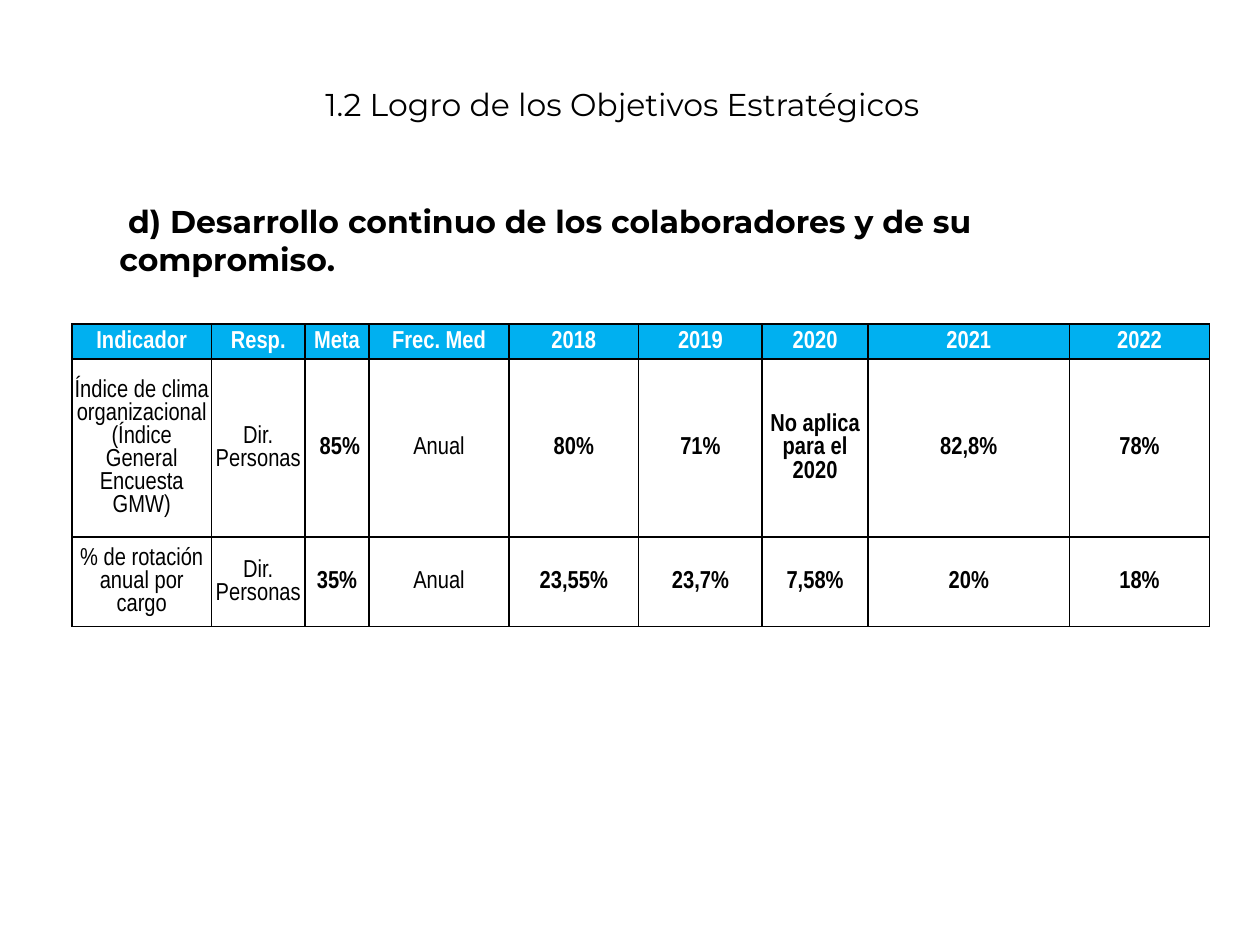
from lxml import etree
from pptx import Presentation
from pptx.dml.color import RGBColor
from pptx.enum import text
from pptx.oxml.ns import qn
from pptx.util import Inches, Pt

BLACK, WHITE, BLUE = "000000", "FFFFFF", "00B0F0"
HEADINGS = [
    # wording, (left, top, width, height), alignment, bold
    ("1.2 Logro de los Objetivos Estratégicos", (0.85, 0.42, 8.11, 0.81),
     text.PP_ALIGN.CENTER, False),
    ("d) Desarrollo continuo de los colaboradores y de su compromiso.",
     (0.85, 1.5, 8.07, 0.81), text.PP_ALIGN.LEFT, True),
]
INDICATORS = [
    ["Indicador", "Resp.", "Meta", "Frec. Med", "2018", "2019", "2020", "2021", "2022"],
    ["Índice de clima organizacional (Índice General Encuesta GMW)", "Dir. Personas",
     " 85%", "Anual", "80%", "71%", "No aplica para el 2020", "82,8%", "78%"],
    ["% de rotación anual por cargo", "Dir. Personas",
     "35%", "Anual", "23,55%", "23,7%", "7,58%", "20%", "18%"],
]
PLAIN_COLUMNS = {"Indicador", "Resp.", "Frec. Med"}
COLUMN_WIDTHS = [1.11, 0.74, 0.51, 1.11, 1.03, 0.98, 0.84, 1.6, 1.11]
ROW_HEIGHTS = [0.28, 1.41, 0.71]
TABLE_LEFT, TABLE_TOP = 0.57, 2.57
CELL_FORMAT = {
    "vertical_anchor": text.MSO_ANCHOR.MIDDLE,
    "margin_left": Inches(0.01), "margin_right": Inches(0.01),
    "margin_top": Inches(0.01), "margin_bottom": 0,
}


def rgb(hex_color):
    return RGBColor.from_string(hex_color)


def set_format(target, values):
    for name, value in values.items():
        setattr(target, name, value)


def add_run(paragraph, words, font, size, color, bold=False):
    run = paragraph.add_run()
    run.text = words
    set_format(run.font, {"name": font, "size": Pt(size), "bold": bold})
    run.font.color.rgb = rgb(color)


def add_borders(cell, color, width):
    """Line all four sides; borders must come before the fill in the cell XML."""
    properties = cell._tc.get_or_add_tcPr()
    for position, side in enumerate(("lnL", "lnR", "lnT", "lnB")):
        line = etree.Element(qn(f"a:{side}"), w=str(Pt(width)))
        fill = etree.SubElement(line, qn("a:solidFill"))
        etree.SubElement(fill, qn("a:srgbClr"), val=color)
        properties.insert(position, line)


def add_heading(slide, words, place, alignment, bold):
    frame = slide.shapes.add_textbox(*map(Inches, place)).text_frame
    set_format(frame, {"word_wrap": True, "vertical_anchor": text.MSO_ANCHOR.MIDDLE})
    paragraph = frame.paragraphs[0]
    paragraph.alignment = alignment
    add_run(paragraph, " ", "Arial", 18, BLACK)
    add_run(paragraph, words, "Montserrat", 18, BLACK, bold)


def add_indicator_table(slide):
    table = slide.shapes.add_table(
        len(INDICATORS), len(COLUMN_WIDTHS), Inches(TABLE_LEFT), Inches(TABLE_TOP),
        Inches(sum(COLUMN_WIDTHS)), Inches(sum(ROW_HEIGHTS))).table
    for column, width in zip(table.columns, COLUMN_WIDTHS):
        column.width = Inches(width)
    for row, height in zip(table.rows, ROW_HEIGHTS):
        row.height = Inches(height)

    for r, values in enumerate(INDICATORS):
        is_header = r == 0
        for c, (heading, value) in enumerate(zip(INDICATORS[0], values)):
            cell = table.cell(r, c)
            set_format(cell, CELL_FORMAT)
            cell.fill.solid()
            cell.fill.fore_color.rgb = rgb(BLUE if is_header else WHITE)
            add_borders(cell, BLACK, 1)
            paragraph = cell.text_frame.paragraphs[0]
            set_format(paragraph, {"alignment": text.PP_ALIGN.CENTER, "line_spacing": 1.0})
            add_run(paragraph, value, "Arial Narrow", 14, WHITE if is_header else BLACK,
                    is_header or heading not in PLAIN_COLUMNS)


def main():
    deck = Presentation()
    set_format(deck, {"slide_width": Inches(10), "slide_height": Inches(7.5)})
    slide = deck.slides.add_slide(deck.slide_layouts[6])
    for heading in HEADINGS:
        add_heading(slide, *heading)
    add_indicator_table(slide)
    deck.save("out.pptx")


if __name__ == "__main__":
    main()
